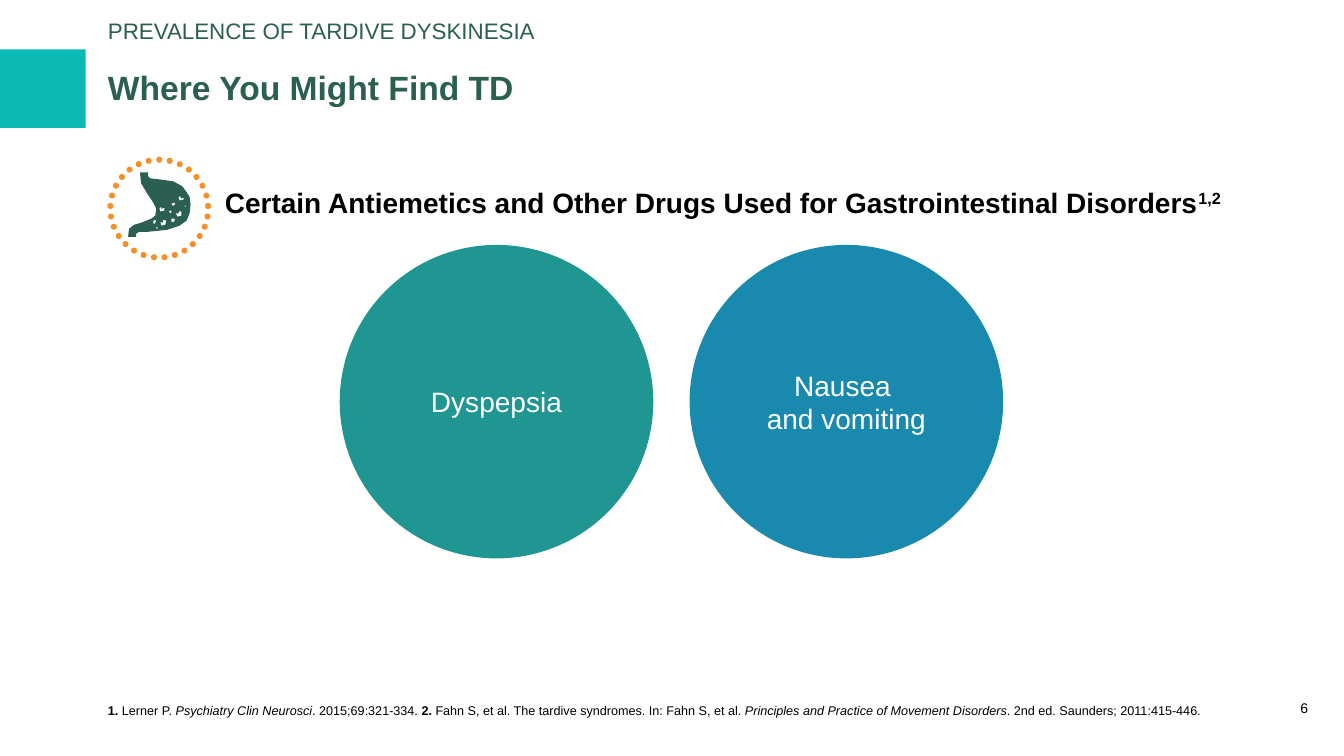
import math

import pptx
import pptx.dml.color
import pptx.enum.shapes
import pptx.enum.text
import pptx.oxml.ns
import pptx.util
from lxml import etree

# Content: each run is (text, style), where style is any of b(old), i(talic), s(uperscript)
GREEN, BLACK, WHITE, ORANGE, TEAL = "2B5F51", "000000", "FFFFFF", "F78F28", "0BBAB4"
LEFT_MARGIN = 8.03

# left, top, width, height (percent of slide), anchor, alignment, spacing, size, colour, runs
TEXTS = [
    (LEFT_MARGIN, 2.4, 76.97, 3.73, "MIDDLE", "LEFT", 0.95, 16, GREEN,
     [("PREVALENCE OF TARDIVE DYSKINESIA", "")]),
    (LEFT_MARGIN, 5.2, 73.97, 13.2, "MIDDLE", "LEFT", 0.95, 24, GREEN,
     [("Where You Might Find TD", "b")]),
    (16.73, 24.8, 78.02, 4.93, "TOP", "LEFT", 0.95, 20, BLACK,
     [("Certain Antiemetics and Other Drugs Used for Gastrointestinal Disorders", "b"),
      ("1,2", "bs")]),
    (LEFT_MARGIN, 92.93, 86.72, 2, "BOTTOM", "LEFT", 1.0, 9, BLACK,
     [("1. ", "b"), ("Lerner P. ", ""), ("Psychiatry Clin Neurosci", "i"),
      (". 2015;69:321-334. ", ""), ("2. ", "b"),
      ("Fahn S, et al. The tardive syndromes. In: Fahn S, et al. ", ""),
      ("Principles and Practice of Movement Disorders", "i"),
      (". 2nd ed. Saunders; 2011:415-446.", "")]),
    (95.8, 89.07, 2.48, 5.73, "BOTTOM", "CENTER", 0.95, 10, BLACK, [("6", "")]),
]

CIRCLES = [("088B87", ["Dyspepsia"]), ("007DA5", ["Nausea ", "and vomiting"])]
CIRCLE_LEFT, CIRCLE_TOP, CIRCLE_STEP, CIRCLE_SIZE = 25.28, 32.4, 26.03, 41.47

RING_X, RING_Y, RING_RADIUS, DOT_SIZE, DOT_COUNT = 11.85, 27.6, 6.47, 0.8, 29

# Stomach outline, then its bubbles, in hundredths of an inch
STOMACH = [
    [(135, 235), (127, 235), (128, 227), (133, 223), (140, 221), (150, 217), (154, 214),
     (155, 207), (152, 201), (146, 192), (140, 182), (139, 173), (139, 171), (147, 171),
     (147, 175), (149, 177), (158, 178), (172, 180), (181, 185), (188, 195), (189, 203),
     (188, 212), (185, 219), (178, 224), (166, 228), (147, 230), (138, 230), (135, 232)],
    [(159, 220), (160, 224), (164, 223), (165, 219), (161, 218), (162, 220), (161, 221)],
    [(174, 211), (176, 215), (180, 214), (180, 210), (177, 209), (178, 210), (176, 212)],
    [(160, 205), (158, 207), (159, 210), (163, 209), (163, 206), (161, 207), (160, 207)],
    [(179, 194), (177, 196), (178, 199), (182, 198), (182, 196), (180, 197), (179, 196)],
    [(155, 220), (154, 218), (152, 219), (152, 222), (154, 222), (154, 221)],
    [(174, 219), (173, 217), (170, 217), (170, 220), (173, 221), (172, 219)],
    [(174, 203), (173, 201), (170, 202), (171, 204), (173, 204), (172, 203)],
    [(169, 212), (170, 211), (170, 209), (168, 209), (168, 211), (169, 211)],
    [(156, 225), (155, 225), (155, 227), (156, 227), (157, 226), (156, 226)],
    [(184, 204), (183, 204), (183, 205), (184, 205), (185, 205)],
]

# Deck and blank page
deck = pptx.Presentation()
deck.slide_width = pptx.util.Inches(13.33)
deck.slide_height = pptx.util.Inches(7.5)
page = deck.slides.add_slide(deck.slide_layouts[6])


def across(percent):
    return round(deck.slide_width * percent / 100)


def down(percent):
    return round(deck.slide_height * percent / 100)


def colour(code):
    return pptx.dml.color.RGBColor.from_string(code)


def paint(shape, code, opacity=100):
    shape.shadow.inherit = False
    shape.fill.solid()
    shape.fill.fore_color.rgb = colour(code)
    shape.line.fill.background()
    if opacity < 100:
        tint = shape.fill._xPr.find(".//" + pptx.oxml.ns.qn("a:srgbClr"))
        etree.SubElement(tint, pptx.oxml.ns.qn("a:alpha"), val=str(opacity * 1000))


def add_shape(kind, left, top, width, height, code, opacity=100):
    preset = getattr(pptx.enum.shapes.MSO_SHAPE, kind)
    shape = page.shapes.add_shape(preset, left, top, width, height)
    paint(shape, code, opacity)
    return shape


def set_up_text(box, anchor, alignment, inset):
    frame = box.text_frame
    frame.word_wrap = True
    frame.vertical_anchor = getattr(pptx.enum.text.MSO_ANCHOR, anchor)
    frame.margin_left = frame.margin_right = pptx.util.Inches(inset)
    frame.margin_top = frame.margin_bottom = pptx.util.Inches(inset)
    para = frame.paragraphs[0]
    para.alignment = getattr(pptx.enum.text.PP_ALIGN, alignment)
    return para


def add_span(para, text, size, code, style=""):
    span = para.add_run()
    span.text = text
    span.font.name = "Arial"
    span.font.size = pptx.util.Pt(size)
    span.font.color.rgb = colour(code)
    span.font.bold = "b" in style
    span.font.italic = "i" in style
    if "s" in style:
        span.font._element.set("baseline", "30000")


# Accent block beside the title
add_shape("RECTANGLE", 0, down(6.53), across(6.38), down(10.4), TEAL)

# Headings, references and page number
for left, top, width, height, anchor, alignment, spacing, size, code, runs in TEXTS:
    box = page.shapes.add_textbox(across(left), down(top), across(width), down(height))
    para = set_up_text(box, anchor, alignment, 0)
    para.line_spacing = spacing
    for text, style in runs:
        add_span(para, text, size, code, style)

# Stomach icon
outline = page.shapes.build_freeform(*STOMACH[0][0], scale=pptx.util.Inches(0.01))
for number, contour in enumerate(STOMACH):
    if number:
        outline.move_to(*contour[0])
    outline.add_line_segments(contour[1:], close=True)
paint(outline.convert_to_shape(), GREEN)

# Dotted ring around the icon
dot = down(DOT_SIZE)
for number in range(DOT_COUNT):
    angle = 2 * math.pi * number / DOT_COUNT
    x = across(RING_X) + down(RING_RADIUS) * math.sin(angle)
    y = down(RING_Y) - down(RING_RADIUS) * math.cos(angle)
    add_shape("OVAL", round(x - dot / 2), round(y - dot / 2), dot, dot, ORANGE)

# Two large circles
for number, (code, lines) in enumerate(CIRCLES):
    circle = add_shape("OVAL", across(CIRCLE_LEFT + number * CIRCLE_STEP), down(CIRCLE_TOP),
                       down(CIRCLE_SIZE), down(CIRCLE_SIZE), code, opacity=90)
    para = set_up_text(circle, "MIDDLE", "CENTER", 0.05)
    for row, text in enumerate(lines):
        if row:
            para.add_line_break()
        add_span(para, text, 20, WHITE)

deck.save("out.pptx")
